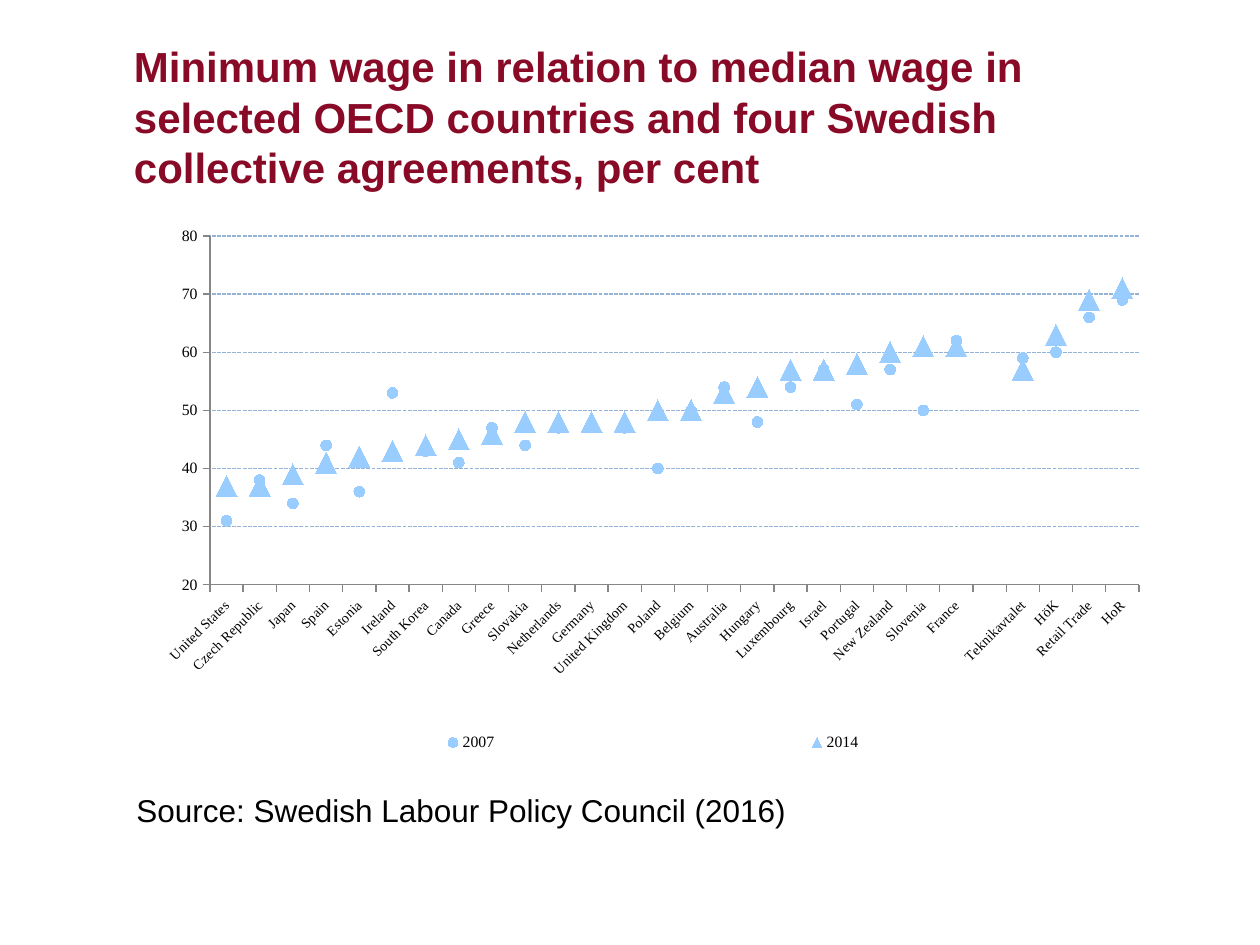
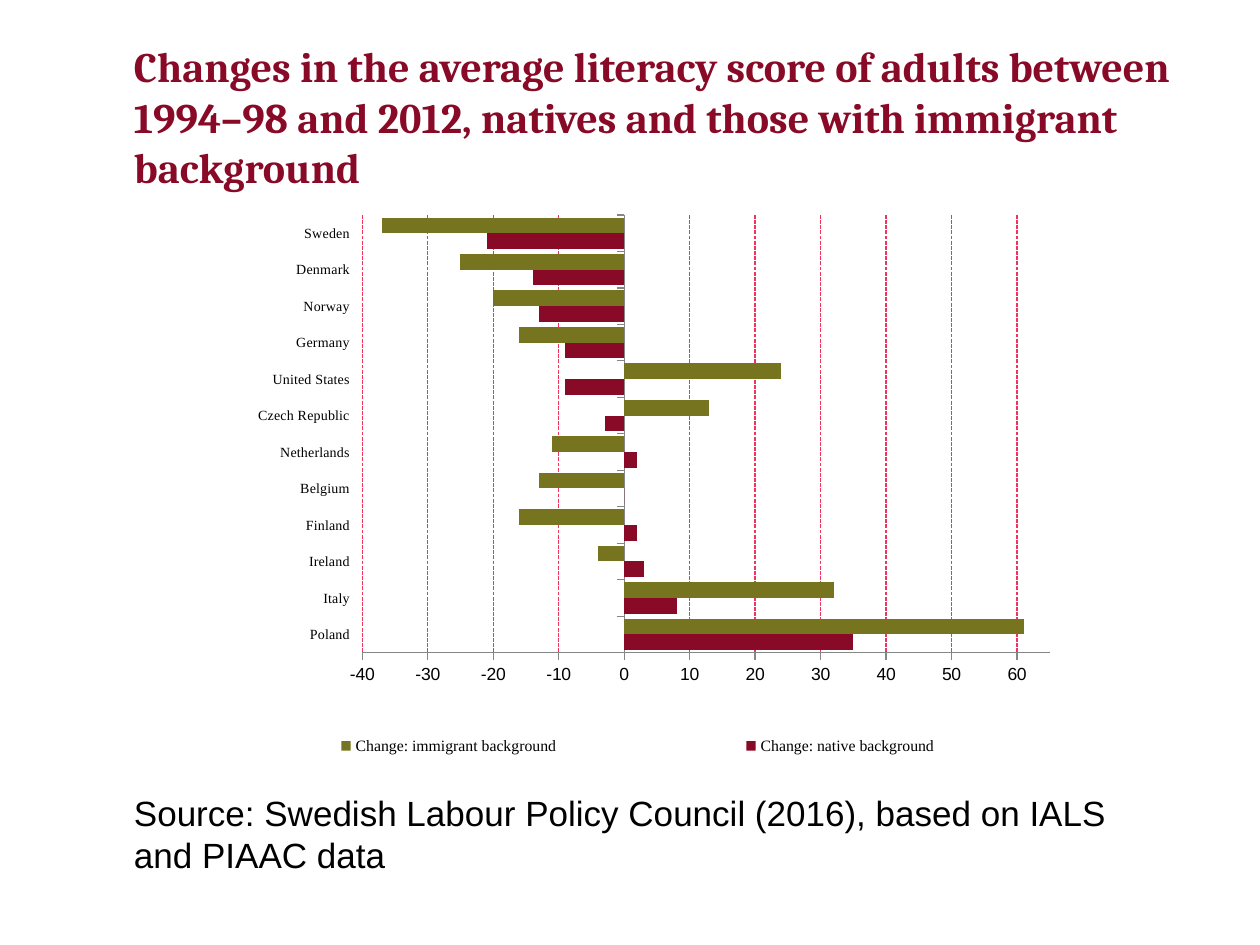
from dataclasses import dataclass
from typing import Optional

import pptx
import pptx.chart.data
import pptx.dml.color
import pptx.enum.chart
import pptx.enum.dml
import pptx.enum.text
import pptx.oxml
import pptx.oxml.ns
import pptx.util
from pptx.util import Cm, Pt

XL = pptx.enum.chart


@dataclass(frozen=True)
class Theme:
    wine: str = "880A26"
    olive: str = "76741E"
    sky: str = "99CCFF"
    grid_blue: str = "95B3D7"
    grid_pink: str = "F0345D"
    axis: str = "868686"
    ink: str = "000000"
    sans: str = "Arial"
    serif: str = "Times New Roman"
    title_serif: str = "Cambria"
    title_size: int = 24
    category_size: int = 8
    legend_size: int = 9
    line_factor: float = 1.2


THEME = Theme()


@dataclass(frozen=True)
class Box:
    left: float
    top: float
    width: float
    height: float


@dataclass(frozen=True)
class Series:
    name: str
    values: tuple
    color: str
    marker: Optional[XL.XL_MARKER_STYLE] = None
    marker_size: int = 0


@dataclass(frozen=True)
class ChartSpec:
    kind: XL.XL_CHART_TYPE
    box: Box
    plot: Box
    legend: Box
    categories: tuple
    series: tuple
    font: str
    size: int
    minimum: float
    maximum: float
    grid: str
    label_rotation: int = 0


@dataclass(frozen=True)
class ChartSlide:
    title: str
    title_font: str
    source: str
    source_size: int
    source_left: float
    chart: ChartSpec


TITLE_BOX = Box(2.7, 0.76, 21.21, 3.18)
SOURCE_TOP, SOURCE_HEIGHT = 15.82, 2.2

WAGES = ChartSpec(
    kind=XL.XL_CHART_TYPE.LINE_MARKERS,
    box=Box(2.73, 4.18, 20.88, 11.36),
    plot=Box(0.072, 0.051, 0.897, 0.619),
    legend=Box(0, 0.9, 1, 0.1),
    categories=(
        "United States", "Czech Republic", "Japan", "Spain", "Estonia", "Ireland",
        "South Korea", "Canada", "Greece", "Slovakia", "Netherlands", "Germany",
        "United Kingdom", "Poland", "Belgium", "Australia", "Hungary", "Luxembourg",
        "Israel", "Portugal", "New Zealand", "Slovenia", "France", "",
        "Teknikavtalet", "HöK", "Retail Trade", "HoR",
    ),
    series=(
        Series("2007", (31, 38, 34, 44, 36, 53, 43, 41, 47, 44, 47, None, 47, 40,
                        50, 54, 48, 54, 57, 51, 57, 50, 62, None, 59, 60, 66, 69),
               THEME.sky, XL.XL_MARKER_STYLE.CIRCLE, 6),
        Series("2014", (37, 37, 39, 41, 42, 43, 44, 45, 46, 48, 48, 48, 48, 50,
                        50, 53, 54, 57, 57, 58, 60, 61, 61, None, 57, 63, 69, 71),
               THEME.sky, XL.XL_MARKER_STYLE.TRIANGLE, 12),
    ),
    font=THEME.serif,
    size=9,
    minimum=20,
    maximum=80,
    grid=THEME.grid_blue,
    label_rotation=-45,
)

LITERACY = ChartSpec(
    kind=XL.XL_CHART_TYPE.BAR_CLUSTERED,
    box=Box(3.15, 3.72, 19.41, 12.04),
    plot=Box(0.214, 0.051, 0.714, 0.733),
    legend=Box(0, 0.89, 1, 0.1),
    categories=(
        "Poland", "Italy", "Ireland", "Finland", "Belgium", "Netherlands",
        "Czech Republic", "United States", "Germany", "Norway", "Denmark", "Sweden",
    ),
    series=(
        Series("Change: native background",
               (35, 8, 3, 2, 0, 2, -3, -9, -9, -13, -14, -21), THEME.wine),
        Series("Change: immigrant background",
               (61, 32, -4, -16, -13, -11, 13, 24, -16, -20, -25, -37), THEME.olive),
    ),
    font=THEME.sans,
    size=10,
    minimum=-40,
    maximum=65,
    grid=THEME.grid_pink,
)

SLIDES = (
    ChartSlide(
        "Minimum wage in relation to median wage in selected OECD countries "
        "and four Swedish collective agreements, per cent",
        THEME.sans, "Source: Swedish Labour Policy Council (2016)", 18, 2.75, WAGES),
    ChartSlide(
        "Changes in the average literacy score of adults between 1994–98 and 2012, "
        "natives and those with immigrant background",
        THEME.title_serif,
        "Source: Swedish Labour Policy Council (2016), based on IALS and PIAAC data",
        20, 2.7, LITERACY),
)


def rgb(color: str) -> pptx.dml.color.RGBColor:
    return pptx.dml.color.RGBColor.from_string(color)


def set_font(font, name: str, size: int, color: str, bold: bool = False) -> None:
    font.name = name
    font.size = Pt(size)
    font.bold = bold
    font.color.rgb = rgb(color)


def fill_placeholder(sp, box: Box, text: str, font: str, size: int, color: str,
                     anchor, bold: bool = False) -> None:
    sp.left, sp.top = Cm(box.left), Cm(box.top)
    sp.width, sp.height = Cm(box.width), Cm(box.height)
    tf = sp.text_frame
    tf.word_wrap = True
    tf.auto_size = pptx.enum.text.MSO_AUTO_SIZE.NONE
    tf.vertical_anchor = anchor
    tf.margin_left = 0
    tf.margin_right = Cm(0.25)
    tf.margin_top = tf.margin_bottom = Cm(0.13)
    p = tf.paragraphs[0]
    pPr = p._p.get_or_add_pPr()
    pPr.set("marL", "0")
    pPr.set("indent", "0")
    pPr.append(pptx.oxml.parse_xml(f"<a:buNone {pptx.oxml.ns.nsdecls('a')}/>"))
    p.alignment = pptx.enum.text.PP_ALIGN.LEFT
    p.space_before = Pt(0)
    p.line_spacing = Pt(size * THEME.line_factor)
    r = p.add_run()
    r.text = text
    set_font(r.font, font, size, color, bold)


def layout_xml(box: Box, inner: bool = False):
    target = '<c:layoutTarget val="inner"/>' if inner else ""
    return pptx.oxml.parse_xml(
        f"<c:layout {pptx.oxml.ns.nsdecls('c')}><c:manualLayout>{target}"
        '<c:xMode val="edge"/><c:yMode val="edge"/>'
        f'<c:x val="{box.left}"/><c:y val="{box.top}"/>'
        f'<c:w val="{box.width}"/><c:h val="{box.height}"/>'
        "</c:manualLayout></c:layout>")


def place_parts(chart, spec: ChartSpec) -> None:
    root = chart.element
    for old in root.xpath(".//c:plotArea/c:layout | .//c:legend/c:layout"):
        old.getparent().remove(old)
    root.xpath(".//c:plotArea")[0].insert(0, layout_xml(spec.plot, inner=True))
    root.xpath(".//c:legend/c:legendPos")[0].addnext(layout_xml(spec.legend))


def style_axes(chart, spec: ChartSpec) -> None:
    cat, val = chart.category_axis, chart.value_axis
    for axis in (cat, val):
        axis.major_tick_mark = XL.XL_TICK_MARK.OUTSIDE
        axis.minor_tick_mark = XL.XL_TICK_MARK.NONE
        axis.format.line.color.rgb = rgb(THEME.axis)
        axis.format.line.width = Pt(0.75)
    cat.has_major_gridlines = False
    cat.tick_label_position = XL.XL_TICK_LABEL_POSITION.LOW
    set_font(cat.tick_labels.font, THEME.serif, THEME.category_size, THEME.ink)
    if spec.label_rotation:
        body = chart.element.xpath(".//c:catAx/c:txPr/a:bodyPr")[0]
        body.set("rot", str(spec.label_rotation * 60000))
        body.set("vert", "horz")
    val.minimum_scale, val.maximum_scale = spec.minimum, spec.maximum
    val.major_unit = 10
    val.tick_labels.number_format = "0"
    val.tick_labels.number_format_is_linked = False
    val.has_major_gridlines = True
    line = val.major_gridlines.format.line
    line.color.rgb = rgb(spec.grid)
    line.width = Pt(0.75)
    line.dash_style = pptx.enum.dml.MSO_LINE.SQUARE_DOT


def style_series(series, spec: Series) -> None:
    if spec.marker is None:
        series.invert_if_negative = False
        target = series.format
    else:
        series.smooth = False
        series.format.line.fill.background()
        series.marker.style = spec.marker
        series.marker.size = spec.marker_size
        target = series.marker.format
    target.fill.solid()
    target.fill.fore_color.rgb = rgb(spec.color)
    target.line.fill.background()


def add_chart(s, spec: ChartSpec) -> None:
    data = pptx.chart.data.CategoryChartData(number_format="0")
    data.categories = spec.categories
    for item in spec.series:
        data.add_series(item.name, item.values)
    box = spec.box
    chart = s.shapes.add_chart(spec.kind, Cm(box.left), Cm(box.top),
                               Cm(box.width), Cm(box.height), data).chart
    chart.has_title = False
    set_font(chart.font, spec.font, spec.size, THEME.ink)
    chart.has_legend = True
    chart.legend.position = XL.XL_LEGEND_POSITION.RIGHT
    chart.legend.include_in_layout = False
    set_font(chart.legend.font, THEME.serif, THEME.legend_size, THEME.ink)
    plot = chart.plots[0]
    plot.vary_by_categories = False
    if spec.kind == XL.XL_CHART_TYPE.BAR_CLUSTERED:
        plot.gap_width = 33
        plot.overlap = 0
    for series, item in zip(plot.series, spec.series):
        style_series(series, item)
    style_axes(chart, spec)
    place_parts(chart, spec)


def add_chart_slide(prs, spec: ChartSlide) -> None:
    anchor = pptx.enum.text.MSO_ANCHOR
    s = prs.slides.add_slide(prs.slide_layouts[1])
    fill_placeholder(s.shapes.title, TITLE_BOX, spec.title, spec.title_font,
                     THEME.title_size, THEME.wine, anchor.MIDDLE, bold=True)
    source_box = Box(spec.source_left, SOURCE_TOP, TITLE_BOX.width, SOURCE_HEIGHT)
    fill_placeholder(s.placeholders[1], source_box, spec.source, THEME.sans,
                     spec.source_size, THEME.ink, anchor.TOP)
    add_chart(s, spec.chart)


def main() -> None:
    prs = pptx.Presentation()
    prs.slide_width, prs.slide_height = Cm(25.4), Cm(19.05)
    for spec in SLIDES:
        add_chart_slide(prs, spec)
    prs.save("out.pptx")


if __name__ == "__main__":
    main()
